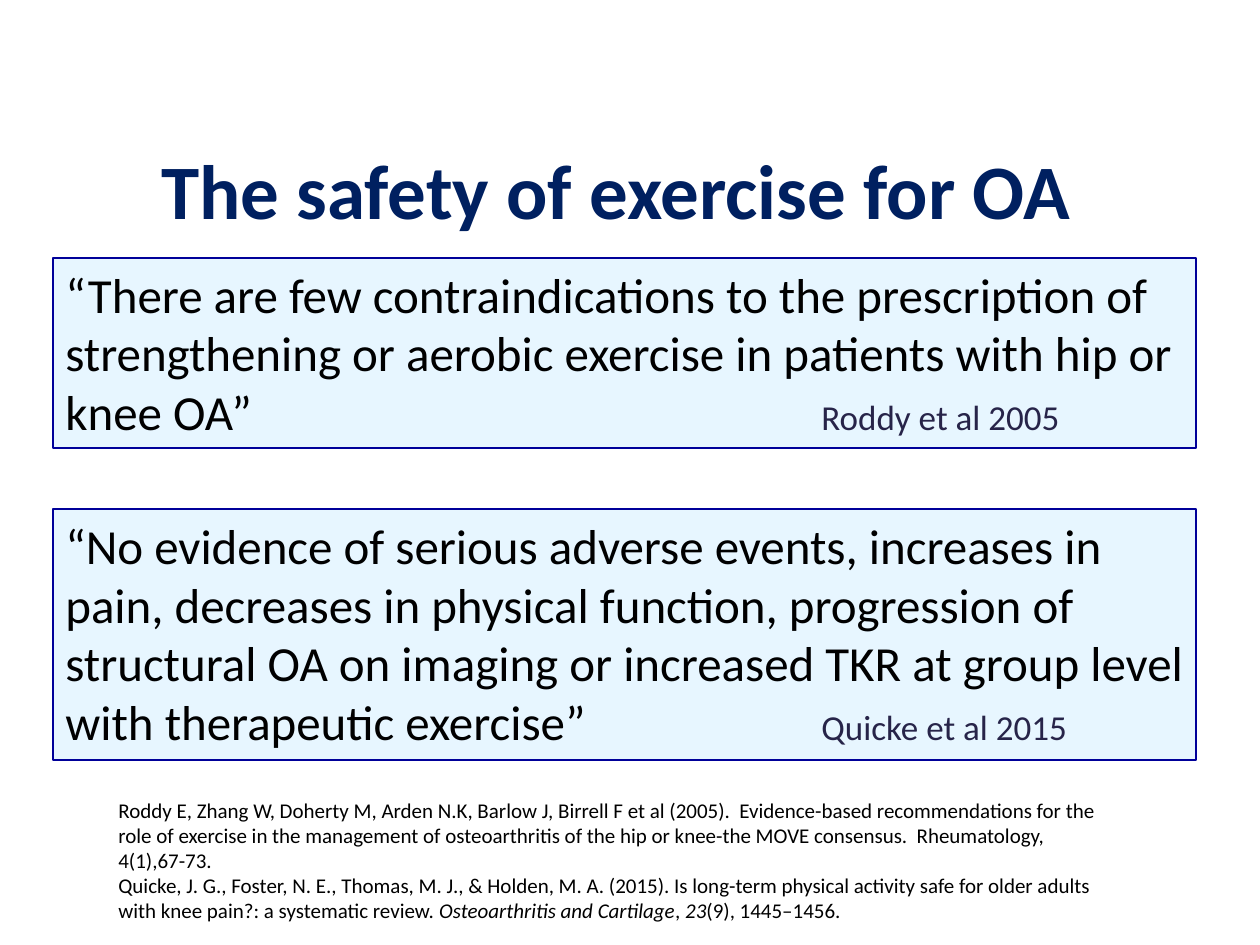
from pptx import Presentation, util as u
from pptx.dml.color import RGBColor
from pptx.enum import shapes, text
from pptx.oxml.ns import qn
from lxml import etree

# Content
TITLE = "The safety of exercise for OA"
QUOTES = [  # top, height, quote, author
    (258, 190, "“There are few contraindications to the prescription of strengthening "
     "or aerobic exercise in patients with hip or knee OA”", "Roddy et al 2005"),
    (509, 251, "“No evidence of serious adverse events, increases in pain, decreases in "
     "physical function, progression of structural OA on imaging or increased TKR at "
     "group level with therapeutic exercise”", "Quicke et al 2015"),
]
REFS = [  # runs of (words, italic)
    [("Roddy E, Zhang W, Doherty M, Arden N.K, Barlow J, Birrell F et al (2005).  "
      "Evidence-based recommendations for the role of exercise in the management of "
      "osteoarthritis of the hip or knee-the MOVE consensus.  Rheumatology, "
      "4(1),67-73.", False)],
    [("Quicke, J. G., Foster, N. E., Thomas, M. J., & Holden, M. A. (2015). Is long-term "
      "physical activity safe for older adults with knee pain?: a systematic review. ", False),
     ("Osteoarthritis and Cartilage", True), (", ", False),
     ("23", True), ("(9), 1445–1456.", False)],
]

FONT = "Calibri"
NAVY = RGBColor(0x00, 0x20, 0x60)
PALE = RGBColor(0xE7, 0xF6, 0xFF)
EDGE = RGBColor(0x00, 0x00, 0x99)
INK = RGBColor(0x27, 0x24, 0x49)
BLACK = RGBColor(0, 0, 0)


def px(n):
    return round(n * 914400 / 126)


def add_run(para, words, size, color, bold=False, italic=False):
    run = para.add_run()
    run.text = words
    font = run.font
    font.name, font.size, font.color.rgb = FONT, u.Pt(size), color
    font.bold, font.italic = bold, italic


def set_frame(shape):
    frame = shape.text_frame
    frame.word_wrap = True
    frame.vertical_anchor = text.MSO_ANCHOR.TOP
    return frame


def add_tab(para, pos):
    tabs = etree.SubElement(para._p.get_or_add_pPr(), qn("a:tabLst"))
    etree.SubElement(tabs, qn("a:tab"), pos=str(px(pos)), algn="l")


prs = Presentation()
prs.slide_width, prs.slide_height = px(1260), px(945)
slide = prs.slides.add_slide(prs.slide_layouts[6])

# Title
box = slide.shapes.add_textbox(px(14), px(136), px(1205), px(158))
para = set_frame(box).paragraphs[0]
para.alignment = text.PP_ALIGN.CENTER
add_run(para, TITLE, 44, NAVY, bold=True)

# Quote panels, with the author at a tab stop on the last line
for top, height, quote, author in QUOTES:
    panel = slide.shapes.add_shape(shapes.MSO_SHAPE.RECTANGLE,
                                   px(53), px(top), px(1143), px(height))
    panel.shadow.inherit = False
    panel.fill.solid()
    panel.fill.fore_color.rgb = PALE
    panel.line.color.rgb = EDGE
    panel.line.width = u.Pt(0.75)
    para = set_frame(panel).paragraphs[0]
    para.alignment = text.PP_ALIGN.LEFT
    add_tab(para, 756)
    add_run(para, quote + "\t", 28, BLACK)
    add_run(para, author, 20, INK)

# References
box = slide.shapes.add_textbox(px(106), px(791), px(1022), px(140))
frame = set_frame(box)
for i, runs in enumerate(REFS):
    para = frame.add_paragraph() if i else frame.paragraphs[0]
    for words, italic in runs:
        add_run(para, words, 12, BLACK, italic=italic)

prs.save("out.pptx")
